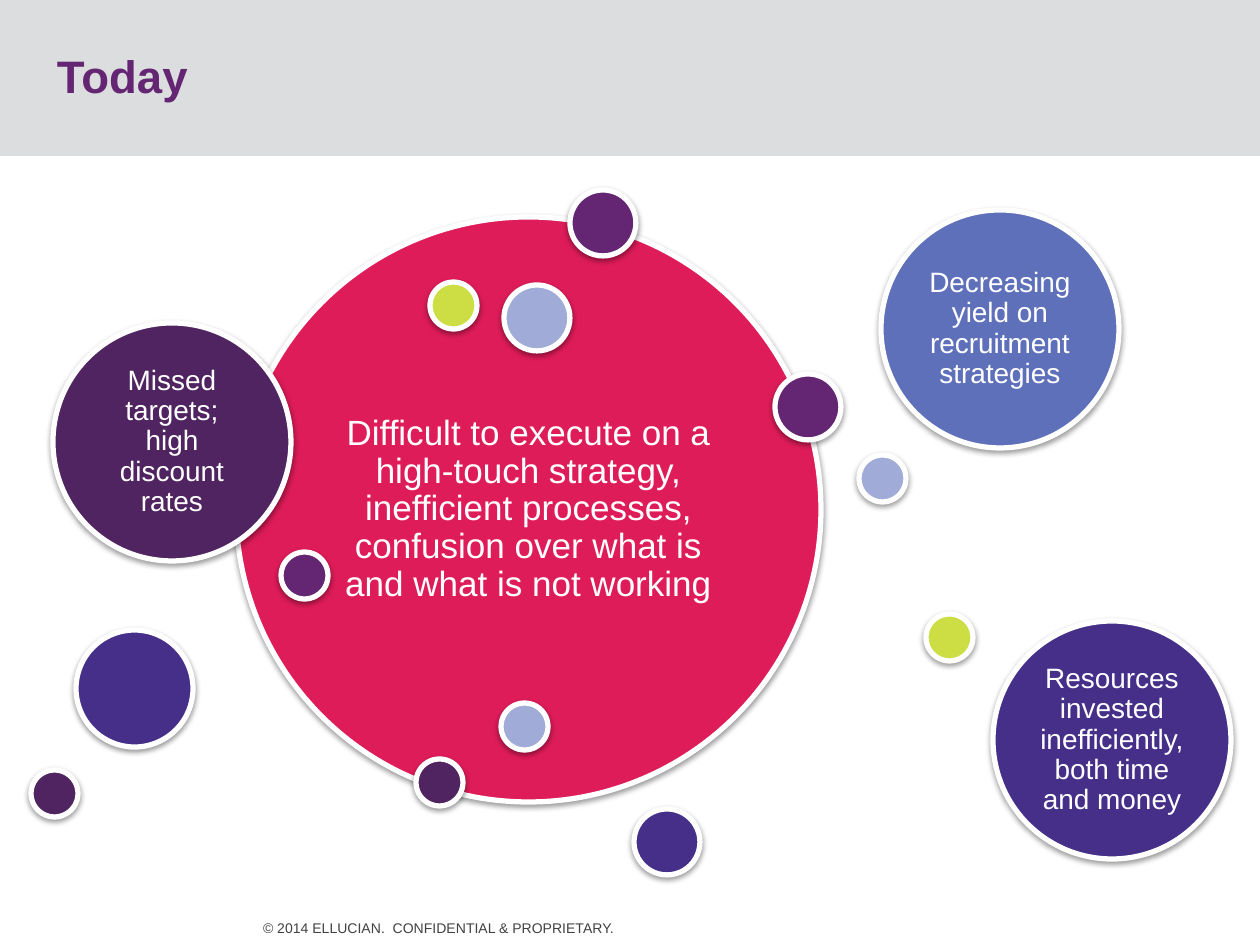
import pptx
import pptx.util
import pptx.dml.color
import pptx.enum.shapes
import pptx.enum.text
import pptx.oxml

PX = 914400 / 126
ANCHOR = pptx.enum.text.MSO_ANCHOR
ALIGN = pptx.enum.text.PP_ALIGN
SHAPE = pptx.enum.shapes.MSO_SHAPE

WHITE, GREY, CHARCOAL = "FFFFFF", "DCDDDE", "414042"
PURPLE, PLUM, INDIGO = "642673", "4F2460", "462F89"
CRIMSON, BLUE, LAVENDER, LIME = "DF1C5A", "5F70BB", "A1ABD7", "CCDE44"

TITLE = "Today"
FOOTER = "© 2014 ELLUCIAN.  CONFIDENTIAL & PROPRIETARY."

DIAMETERS = {"main": 585, "topic": 238, "large": 117, "medium": 66, "small": 47}
TEXT_SIZES = {"main": 20, "topic": 16}

# size, left, top, colour, text; back to front
CIRCLES = [
    ("main", 236, 217, CRIMSON,
     "Difficult to execute on a high-touch strategy, inefficient processes, "
     "confusion over what is and what is not working"),
    ("medium", 570, 190, PURPLE, ""),
    ("small", 416, 759, PLUM, ""),
    ("small", 859, 455, LAVENDER, ""),
    ("medium", 634, 809, INDIGO, ""),
    ("small", 430, 282, LIME, ""),
    ("small", 281, 552, PURPLE, ""),
    ("topic", 53, 323, PLUM, "Missed targets; high discount rates"),
    ("medium", 504, 285, LAVENDER, ""),
    ("large", 76, 630, INDIGO, ""),
    ("topic", 881, 210, BLUE, "Decreasing yield on recruitment strategies"),
    ("medium", 775, 374, PURPLE, ""),
    ("small", 31, 770, PLUM, ""),
    ("small", 501, 703, LAVENDER, ""),
    ("topic", 993, 621, INDIGO,
     "Resources invested inefficiently, both time and money"),
    ("small", 926, 614, LIME, ""),
]

SHADOW = (
    '<a:effectLst xmlns:a="http://schemas.openxmlformats.org/drawingml/2006/main">'
    '<a:outerShdw blurRad="40000" dist="20000" dir="5400000" rotWithShape="0">'
    '<a:srgbClr val="000000"><a:alpha val="38000"/></a:srgbClr>'
    '</a:outerShdw></a:effectLst>'
)


def px(*lengths):
    return [pptx.util.Emu(round(length * PX)) for length in lengths]


def rgb(value):
    return pptx.dml.color.RGBColor.from_string(value)


def write(shape, text, size, color, anchor, inset=0, align=ALIGN.LEFT,
          spacing=1.0, bold=False):
    frame = shape.text_frame
    frame.word_wrap = True
    frame.vertical_anchor = anchor
    (frame.margin_left, frame.margin_top,
     frame.margin_right, frame.margin_bottom) = px(*[inset] * 4)
    paragraph = frame.paragraphs[0]
    paragraph.text = text
    paragraph.alignment = align
    paragraph.line_spacing = spacing
    paragraph.font.name = "Arial"
    paragraph.font.size = pptx.util.Pt(size)
    paragraph.font.bold = bold
    paragraph.font.color.rgb = rgb(color)


def add_circle(shapes, size, left, top, color, text):
    diameter = DIAMETERS[size]
    circle = shapes.add_shape(SHAPE.OVAL, *px(left, top, diameter, diameter))
    circle.fill.solid()
    circle.fill.fore_color.rgb = rgb(color)
    circle.line.color.rgb = rgb(WHITE)
    circle.line.width = pptx.util.Pt(3)
    circle._element.spPr.append(pptx.oxml.parse_xml(SHADOW))
    if text:
        write(circle, text, TEXT_SIZES[size], WHITE, ANCHOR.MIDDLE,
              inset=9, align=ALIGN.CENTER, spacing=0.9)


def main():
    deck = pptx.Presentation()
    deck.slide_width, deck.slide_height = px(1260, 945)
    shapes = deck.slides.add_slide(deck.slide_layouts[6]).shapes

    # Header band and title
    band = shapes.add_shape(SHAPE.RECTANGLE, *px(0, 0, 1260, 156))
    band.shadow.inherit = False
    band.fill.solid()
    band.fill.fore_color.rgb = rgb(GREY)
    band.line.fill.background()
    title = shapes.add_textbox(*px(57, 16, 1145, 127))
    write(title, TITLE, 26, PURPLE, ANCHOR.MIDDLE, spacing=0.85, bold=True)

    # Footer
    footer = shapes.add_textbox(*px(263, 920, 614, 16))
    write(footer, FOOTER, 8, CHARCOAL, ANCHOR.BOTTOM)

    # Circles
    for circle in CIRCLES:
        add_circle(shapes, *circle)

    deck.save("out.pptx")


if __name__ == "__main__":
    main()
